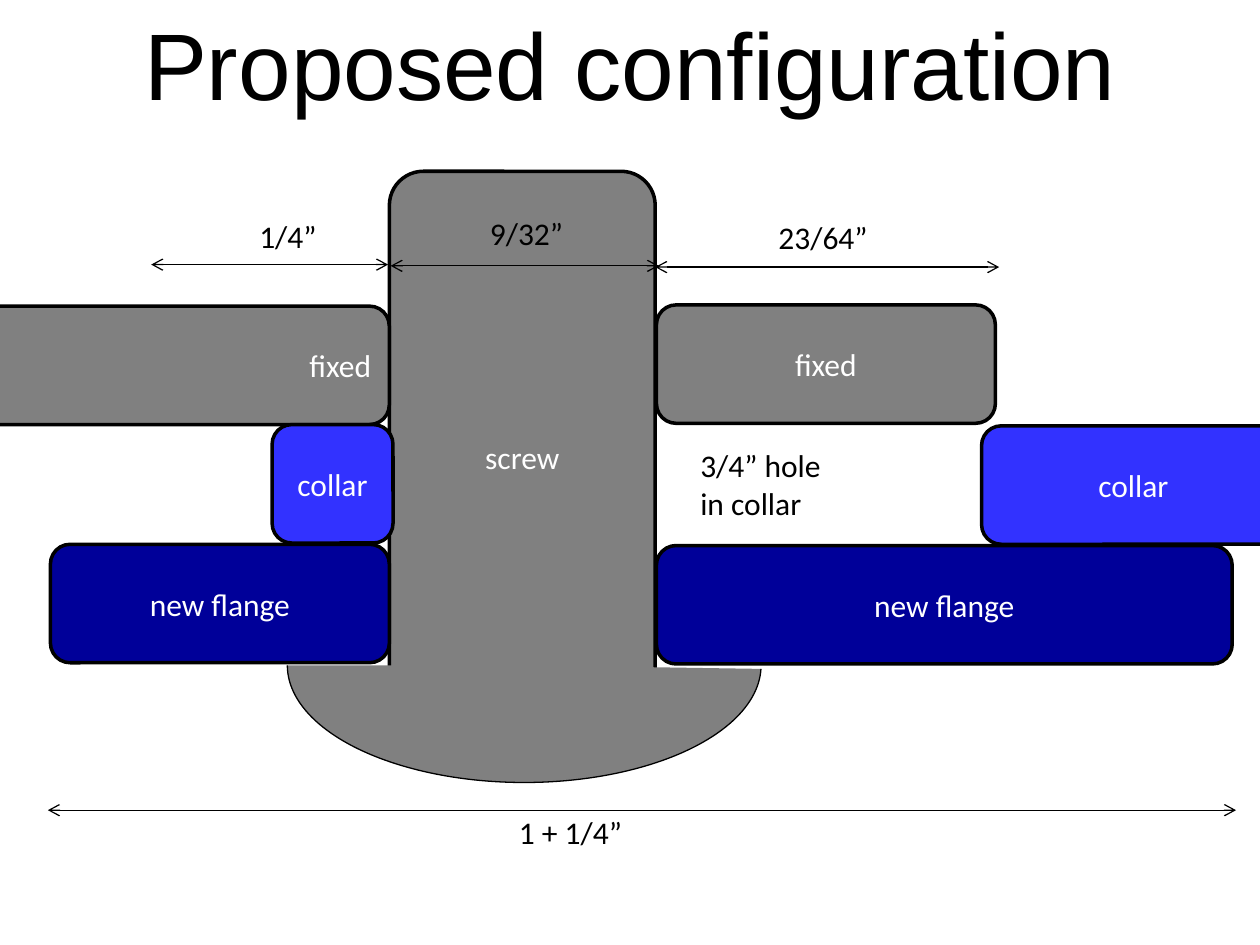
from lxml import etree
from pptx import Presentation
from pptx.dml.color import RGBColor
from pptx.enum import shapes, text
from pptx.oxml.ns import qn
from pptx.util import Inches, Pt

GREY, BLUE, NAVY = "808080", "3232FF", "000099"
BLACK, WHITE = "000000", "FFFFFF"
LAYER_HEIGHT = 0.94


def colour(value):
    return RGBColor.from_string(value)


def style_text(frame, size, font_name, font_colour, align):
    for para in frame.paragraphs:
        para.alignment = align
        for span in para.runs:
            span.font.size = Pt(size)
            span.font.name = font_name
            span.font.color.rgb = colour(font_colour)


def add_title(page, box, wording):
    title = page.shapes.title
    title.left, title.top, title.width, title.height = map(Inches, box)
    frame = title.text_frame
    frame.text = wording
    frame.word_wrap = True
    frame.auto_size = text.MSO_AUTO_SIZE.NONE
    frame.vertical_anchor = text.MSO_ANCHOR.TOP
    style_text(frame, 54, "Arial", BLACK, text.PP_ALIGN.CENTER)


def add_part(page, kind, box, fill, line_width):
    part = page.shapes.add_shape(kind, *map(Inches, box))
    part.shadow.inherit = False
    part.fill.solid()
    part.fill.fore_color.rgb = colour(fill)
    part.line.color.rgb = colour(BLACK)
    part.line.width = Pt(line_width)
    return part


def add_block(page, box, wording, fill, align=text.PP_ALIGN.CENTER):
    block = add_part(page, shapes.MSO_SHAPE.ROUNDED_RECTANGLE, box, fill, 2)
    frame = block.text_frame
    frame.text = wording
    frame.vertical_anchor = text.MSO_ANCHOR.MIDDLE
    style_text(frame, 18, "Calibri", WHITE, align)
    return block


def add_screw_head(page, box):
    head = add_part(page, shapes.MSO_SHAPE.ARC, box, GREY, 0.75)
    head.rotation = 180
    head.adjustments[0] = 108.521
    head.adjustments[1] = 0


def add_label(page, box, wording):
    label = page.shapes.add_textbox(*map(Inches, box))
    frame = label.text_frame
    frame.text = wording
    frame.word_wrap = False
    frame.auto_size = text.MSO_AUTO_SIZE.SHAPE_TO_FIT_TEXT
    style_text(frame, 18, "Calibri", BLACK, text.PP_ALIGN.LEFT)


def add_dimension(page, start, end, height, wording, label_box):
    """Draw a double-headed arrow with its measurement."""
    arrow = page.shapes.add_connector(
        shapes.MSO_CONNECTOR.STRAIGHT,
        Inches(start), Inches(height), Inches(end), Inches(height))
    arrow.line.color.rgb = colour(BLACK)
    arrow.line.width = Pt(0.75)
    outline = arrow.line._get_or_add_ln()
    for tip in ("a:headEnd", "a:tailEnd"):
        etree.SubElement(outline, qn(tip), type="arrow")
    etree.SubElement(arrow._element.spPr, qn("a:effectLst"))
    add_label(page, label_box, wording)


def add_assembly(page):
    # Screw shaft
    shaft = add_block(page, (3.09, 1.36, 2.11, 4.53), "screw", GREY)
    shaft.adjustments[0] = 0.128

    # Stacked layers on both sides of the shaft
    layers = [
        (-0.38, 2.43, 3.47, "fixed", GREY, text.PP_ALIGN.RIGHT),
        (5.21, 2.42, 2.69, "fixed", GREY, text.PP_ALIGN.CENTER),
        (2.16, 3.37, 0.96, "collar", BLUE, text.PP_ALIGN.CENTER),
        (7.79, 3.38, 2.41, "collar", BLUE, text.PP_ALIGN.CENTER),
        (0.4, 4.32, 2.69, "new flange", NAVY, text.PP_ALIGN.CENTER),
        (5.21, 4.33, 4.57, "new flange", NAVY, text.PP_ALIGN.CENTER),
    ]
    for left, top, width, wording, fill, align in layers:
        add_block(page, (left, top, width, LAYER_HEIGHT), wording, fill, align)

    # Screw head and collar note
    add_screw_head(page, (2.28, 4.35, 3.76, 1.86))
    add_label(page, (5.46, 3.49, 1.17, 0.71), "3/4” hole\vin collar")


def add_dimensions(page):
    dimensions = [
        (3.1, 5.23, 2.11, "9/32”", (3.79, 1.65, 0.79, 0.4)),
        (1.2, 3.08, 2.1, "1/4”", (1.96, 1.67, 0.66, 0.4)),
        (0.38, 9.81, 6.43, "1 + 1/4”", (4.02, 6.4, 1.03, 0.4)),
        (5.2, 7.93, 2.12, "23/64”", (6.08, 1.68, 0.92, 0.4)),
    ]
    for dimension in dimensions:
        add_dimension(page, *dimension)


def main():
    deck = Presentation()
    deck.slide_width, deck.slide_height = Inches(10), Inches(7.5)
    page = deck.slides.add_slide(deck.slide_layouts.get_by_name("Title Only"))
    add_title(page, (0, 0, 10, 1.01), "Proposed configuration")
    add_assembly(page)
    add_dimensions(page)
    deck.save("out.pptx")


if __name__ == "__main__":
    main()
